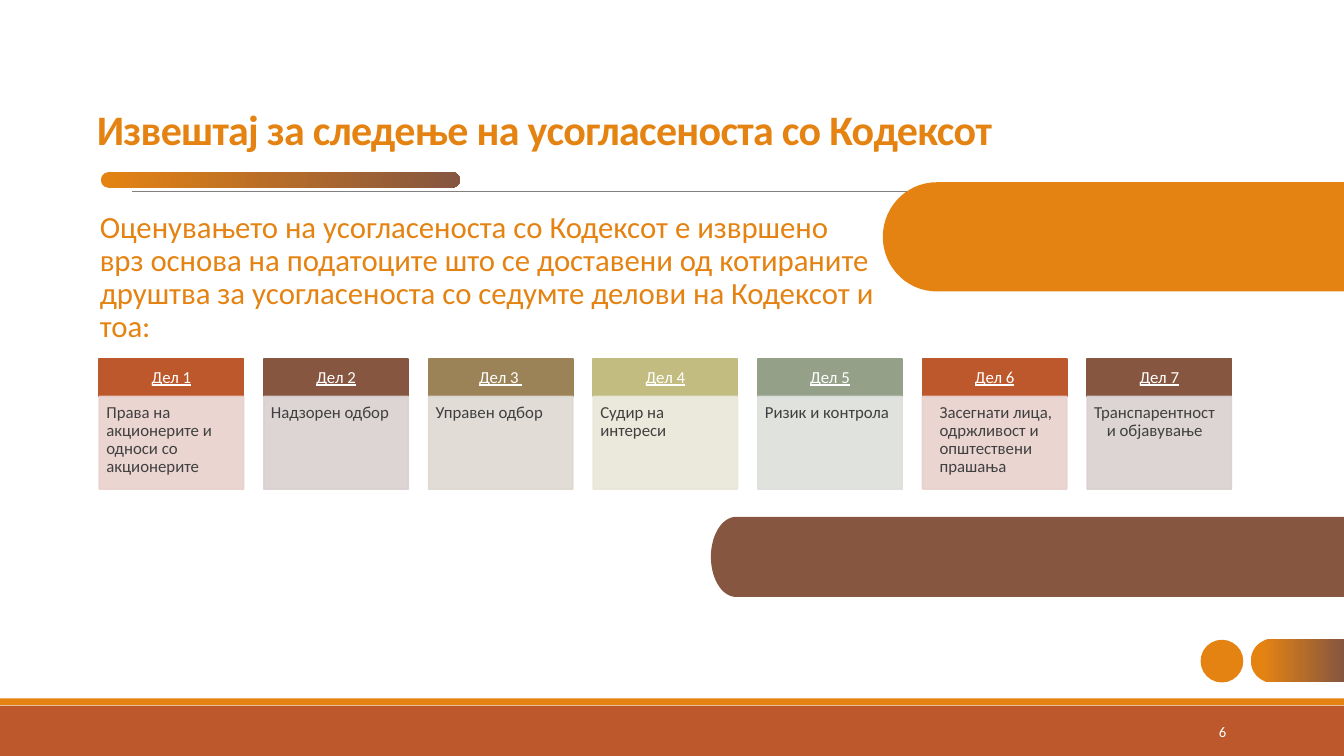
import math
from dataclasses import dataclass

from lxml import etree
from pptx import Presentation
from pptx.dml.color import RGBColor
from pptx.enum import shapes, text
from pptx.oxml import ns
from pptx.util import Pt


@dataclass(frozen=True)
class Theme:
    font: str = "Calibri"
    orange: str = "E48312"
    rust: str = "BD582C"
    brown: str = "865640"
    grey: str = "808080"
    dark: str = "404040"
    white: str = "FFFFFF"
    title: float = 30
    lead: float = 22
    card: float = 12
    number: float = 10.5


T = Theme()
SHAPE, ALIGN, ANCHOR = shapes.MSO_SHAPE, text.PP_ALIGN, text.MSO_ANCHOR

# label, text, header colour, body colour, left margin, first-line indent
PARTS = [
    ("Дел 1", "Права на акционерите и односи со акционерите", T.rust, "E8D1CD", 0, 0),
    ("Дел 2", "Надзорен одбор", T.brown, "D9D1CF", 9, -9),
    ("Дел 3 ", "Управен одбор", "9B8357", "DED9D1", 9, -9),
    ("Дел 4", "Судир на интереси", "C2BC80", "E9E7D8", 0, 0),
    ("Дел 5", "Ризик и контрола", "94A088", "DCDFDA", 9, -9),
    ("Дел 6", "Засегнати лица, одржливост и општествени прашања",
     T.rust, "E8D1CD", 7.2, 0),
    ("Дел 7", "Транспарентност и објавување", T.brown, "D9D1CF", 9, -9),
]


def assign(obj, **values):
    for name, value in values.items():
        setattr(obj, name, value)


def rgb(color):
    return RGBColor.from_string(color)


def paint(sp, fill, line=None):
    """Fill with one colour, or left to right with a (start, colour, colour) gradient."""
    sp.shadow.inherit = False
    if isinstance(fill, tuple):
        start, *colors = fill
        sp.fill.gradient()
        sp.fill.gradient_angle = 0
        for stop, position, color in zip(sp.fill.gradient_stops, (start, 1), colors):
            stop.position = position
            stop.color.rgb = rgb(color)
    else:
        sp.fill.solid()
        sp.fill.fore_color.rgb = rgb(fill)
    if line:
        sp.line.color.rgb = rgb(line)
        sp.line.width = Pt(1.25)
    else:
        sp.line.fill.background()
    return sp


def add_preset(s, kind, box, fill, line=None):
    return paint(s.shapes.add_shape(kind, *map(Pt, box)), fill, line)


def add_tab(s, box, radius, fill):
    """A bar that runs off to the right, rounded at its left end."""
    x, y, w, h = box
    angles = [math.radians(90 + 6 * i) for i in range(31)]
    arc = [(Pt(x + radius + radius * math.cos(a)), Pt(y + h / 2 - h / 2 * math.sin(a)))
           for a in angles]
    outline = s.shapes.build_freeform(Pt(x + w), Pt(y), scale=1.0)
    outline.add_line_segments(arc + [(Pt(x + w), Pt(y + h))], close=True)
    return paint(outline.convert_to_shape(), fill)


def write(sp, words, size, color, align=ALIGN.LEFT, anchor=ANCHOR.TOP,
          insets=(7.2, 3.6, 7.2, 3.6), spacing=0.9, **font):
    tf = sp.text_frame
    left, top, right, bottom = map(Pt, insets)
    assign(tf, word_wrap=True, auto_size=text.MSO_AUTO_SIZE.NONE, vertical_anchor=anchor,
           margin_left=left, margin_top=top, margin_right=right, margin_bottom=bottom)
    p = tf.paragraphs[0]
    assign(p, alignment=align, line_spacing=spacing, space_before=Pt(0))
    r = p.add_run()
    r.text = words
    assign(r.font, name=T.font, size=Pt(size), **font)
    r.font.color.rgb = rgb(color)
    return p


def add_decor(s, width, height):
    add_preset(s, SHAPE.RECTANGLE, (0, height - 36, width, 36), T.rust)
    add_preset(s, SHAPE.RECTANGLE, (0, height - 41.2, width, 4.8), T.orange)
    rule = s.shapes.add_connector(shapes.MSO_CONNECTOR.STRAIGHT,
                                  Pt(94.3), Pt(136.6), Pt(879), Pt(136.6))
    rule.line.color.rgb = rgb(T.grey)
    rule.line.width = Pt(0.5)
    etree.SubElement(rule._element.spPr, ns.qn("a:effectLst"))
    add_preset(s, SHAPE.OVAL, (857.6, 457, 30.5, 30.5), T.orange)
    add_tab(s, (893.5, 456.5, width - 893.5, 31), 15, (0.12, T.orange, T.brown))
    add_tab(s, (630.6, 130.2, width - 630.6, 78), 38.5, T.orange)
    accent = add_preset(s, SHAPE.ROUNDED_RECTANGLE, (72, 122.9, 256.5, 11.2),
                        (0, T.orange, T.brown))
    accent.adjustments[0] = 0.5
    add_tab(s, (507.8, 369.2, width - 507.8, 57.2), 18, T.brown)


def add_heading(s, box):
    title = s.shapes.title
    assign(title, **dict(zip(("left", "top", "width", "height"), map(Pt, box))))
    p = write(title, "Извештај за следење на усогласеноста со Кодексот", T.title,
              T.orange, anchor=ANCHOR.BOTTOM, spacing=0.85, bold=True)
    p.runs[0]._r.get_or_add_rPr().set("spc", "-50")


def add_lead(s, box):
    write(s.shapes.add_textbox(*map(Pt, box)),
          "Оценувањето на усогласеноста со Кодексот е извршено врз основа на податоците "
          "што се доставени од котираните друштва за усогласеноста со седумте делови на "
          "Кодексот и тоа:", T.lead, T.orange, insets=(0, 3.6, 0, 3.6))


def add_card(s, box, part):
    x, y, w, h = box
    head = 27
    label, words, color, tint, margin, indent = part
    header = add_preset(s, SHAPE.RECTANGLE, (x, y, w, head), color, color)
    write(header, label, T.card, T.white, ALIGN.CENTER, ANCHOR.MIDDLE,
          (6.5, 3.6, 6.5, 3.6), underline=True)
    body = add_preset(s, SHAPE.RECTANGLE, (x, y + head, w, h - head), tint, tint)
    for clr in body._element.spPr.iter(ns.qn("a:srgbClr")):
        etree.SubElement(clr, ns.qn("a:alpha"), val="90000")
    p = write(body, words, T.card, T.dark, insets=(5, 5, 6.5, 7.2))
    pPr = p._p.get_or_add_pPr()
    pPr.set("marL", str(Pt(margin)))
    pPr.set("indent", str(Pt(indent)))


def add_cards(s, box):
    x, y, w, h = box
    card = 103
    pitch = (w - card) / (len(PARTS) - 1)
    for i, part in enumerate(PARTS):
        add_card(s, (x + i * pitch, y, card, h), part)


def add_number(s, box):
    write(s.shapes.add_textbox(*map(Pt, box)), "6", T.number, T.white,
          ALIGN.RIGHT, ANCHOR.MIDDLE, spacing=1.0)


def main():
    width, height = 960, 540
    prs = Presentation()
    assign(prs, slide_width=Pt(width), slide_height=Pt(height))
    s = prs.slides.add_slide(prs.slide_layouts.get_by_name("Title Only"))
    add_decor(s, width, height)
    add_heading(s, (62, 45.4, 883.4, 68.4))
    add_lead(s, (71.3, 147.6, 554.4, 104))
    add_cards(s, (71, 256.2, 808.6, 93.2))
    add_number(s, (780, 508.5, 103, 28.8))
    prs.save("out.pptx")


if __name__ == "__main__":
    main()
